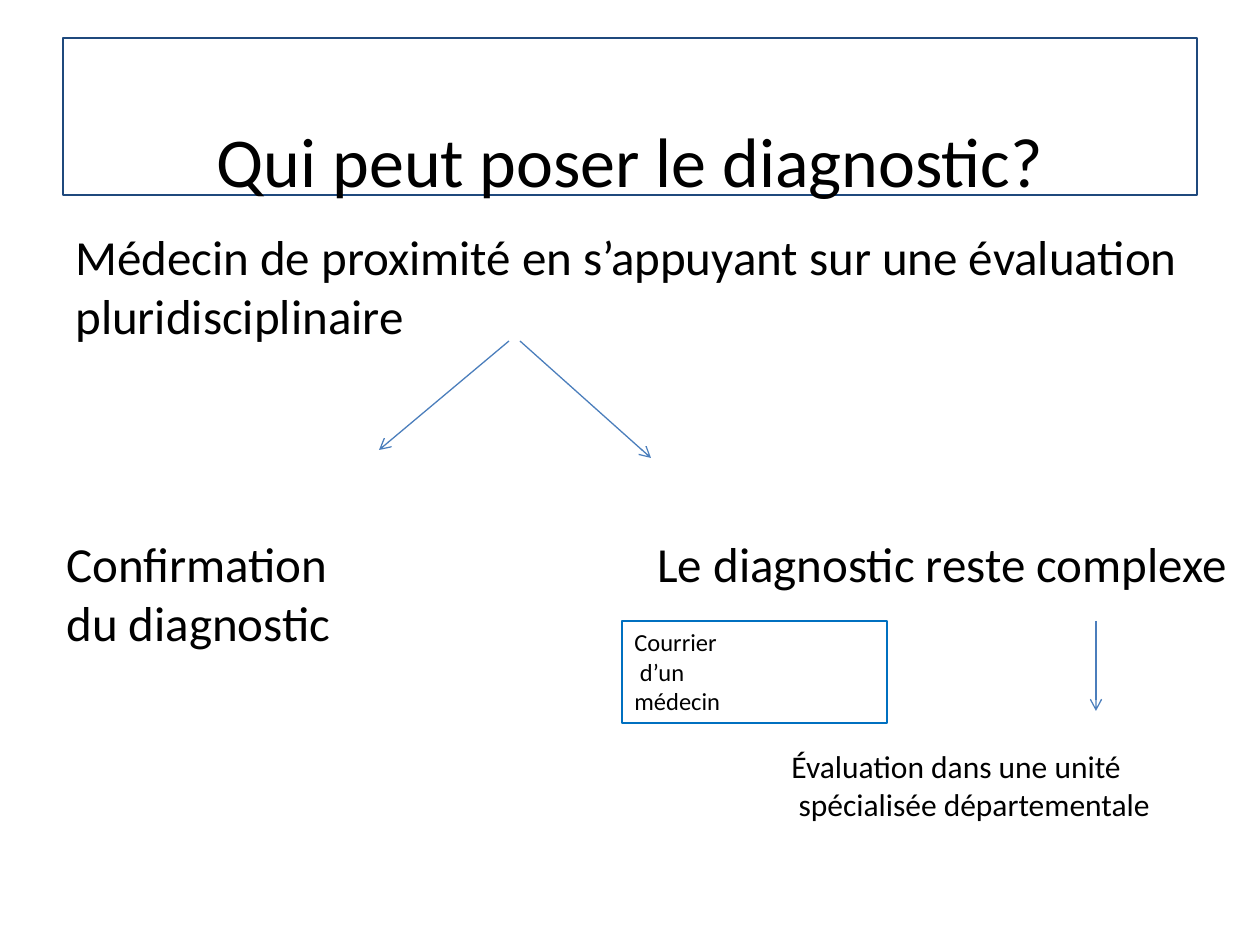
from dataclasses import dataclass

from lxml import etree
from pptx import Presentation
from pptx import util as u
from pptx.dml.color import RGBColor
from pptx.enum import shapes, text
from pptx.oxml.ns import qn

PX_PER_INCH = 126


@dataclass(frozen=True)
class Theme:
    font: str = "Calibri"
    ink: str = "000000"
    title_border: str = "1F497D"
    letter_border: str = "0070C0"
    arrow: str = "4B7EBC"
    title_size: int = 40
    body_size: int = 28
    unit_size: int = 18
    letter_size: int = 14
    line_width: float = 0.75


THEME = Theme()


def px(length):
    return u.Emu(round(length * u.Inches(1) / PX_PER_INCH))


def outline(line, color):
    line.color.rgb = RGBColor.from_string(color)
    line.width = u.Pt(THEME.line_width)


def write(frame, content, size, align=text.PP_ALIGN.LEFT):
    frame.text = content
    for paragraph in frame.paragraphs:
        paragraph.alignment = align
        for run in paragraph.runs:
            run.font.name = THEME.font
            run.font.size = u.Pt(size)
            run.font.color.rgb = RGBColor.from_string(THEME.ink)


def place_title(slide, content, box):
    title = slide.shapes.title
    title.left, title.top, title.width, title.height = map(px, box)
    outline(title.line, THEME.title_border)
    frame = title.text_frame
    frame.auto_size = text.MSO_AUTO_SIZE.NONE
    frame.vertical_anchor = text.MSO_ANCHOR.MIDDLE
    frame.margin_top, frame.margin_bottom = px(86), 0
    write(frame, content, THEME.title_size, text.PP_ALIGN.CENTER)


def add_statement(slide, content, box, size, wrap=False):
    statement = slide.shapes.add_textbox(*map(px, box))
    statement.text_frame.word_wrap = wrap
    write(statement.text_frame, content, size)


def add_letter_box(slide, content, box):
    letter = slide.shapes.add_shape(shapes.MSO_SHAPE.RECTANGLE, *map(px, box))
    letter.shadow.inherit = False
    letter.fill.background()
    outline(letter.line, THEME.letter_border)
    letter.text_frame.word_wrap = True
    letter.text_frame.vertical_anchor = text.MSO_ANCHOR.TOP
    write(letter.text_frame, content, THEME.letter_size)


def add_arrow(slide, start, end):
    arrow = slide.shapes.add_connector(
        shapes.MSO_CONNECTOR.STRAIGHT, *map(px, start + end))
    outline(arrow.line, THEME.arrow)
    properties = arrow.line._get_or_add_ln()
    etree.SubElement(properties, qn("a:tailEnd"), type="arrow")
    etree.SubElement(properties.getparent(), qn("a:effectLst"))


def main():
    deck = Presentation()
    deck.slide_width, deck.slide_height = px(1260), px(945)
    slide = deck.slides.add_slide(deck.slide_layouts.get_by_name("Title Only"))

    place_title(slide, "Qui peut poser le diagnostic?", (63, 38, 1134, 157))
    add_statement(
        slide,
        "Médecin de proximité en s’appuyant sur une évaluation pluridisciplinaire",
        (63, 220, 1134, 624), THEME.body_size, wrap=True)
    add_statement(slide, "Confirmation\ndu diagnostic",
                  (54, 527, 301, 131), THEME.body_size)
    add_statement(slide, "Le diagnostic reste complexe",
                  (645, 527, 601, 72), THEME.body_size)
    add_statement(slide, "Évaluation dans une unité\n spécialisée départementale",
                  (779, 741, 396, 89), THEME.unit_size)

    for start, end in (((520, 341), (651, 458)),
                       ((509, 341), (379, 450)),
                       ((1096, 621), (1096, 711))):
        add_arrow(slide, start, end)

    add_letter_box(slide, "Courrier\n d’un\nmédecin", (622, 621, 265, 102))
    deck.save("out.pptx")


if __name__ == "__main__":
    main()
